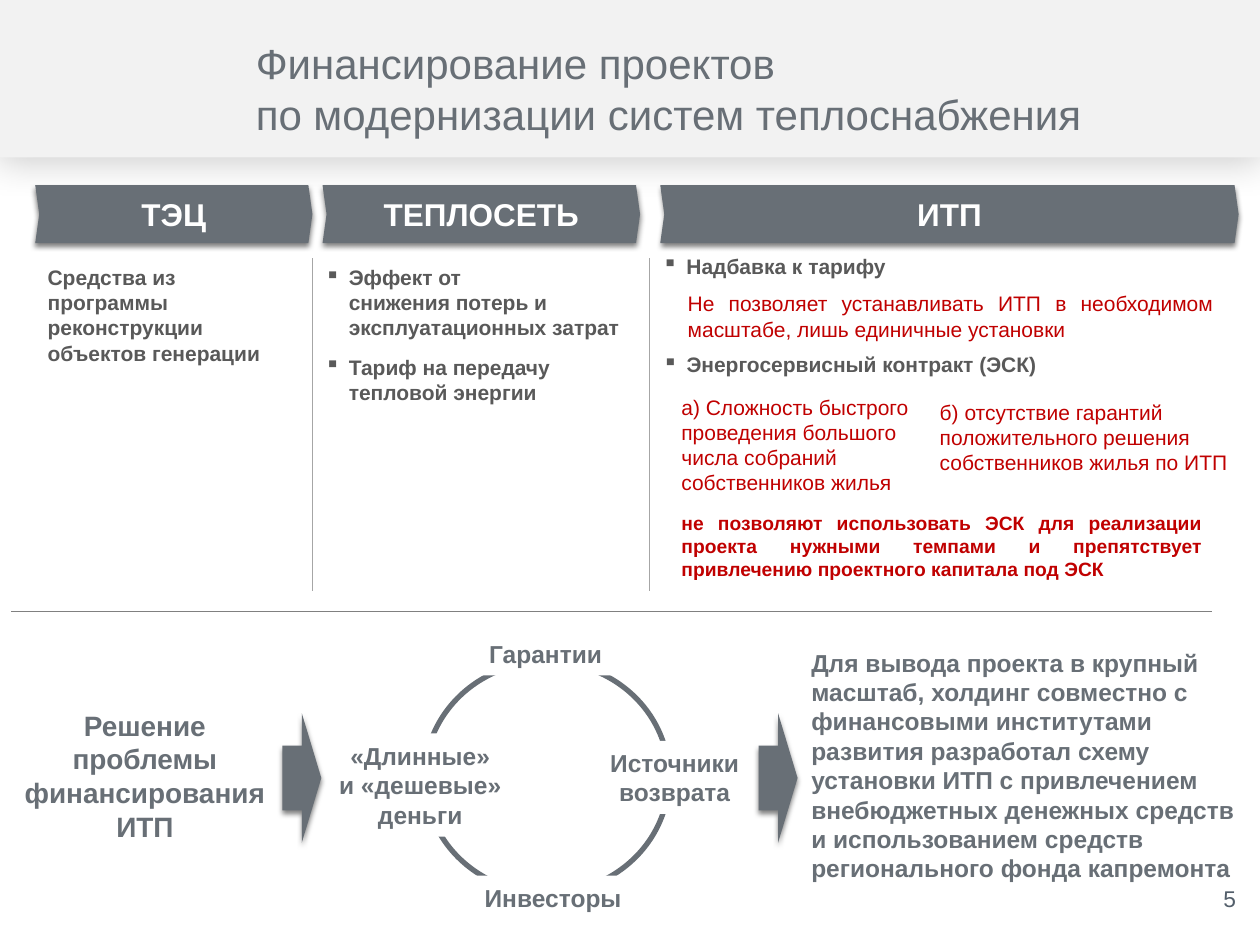
from dataclasses import dataclass

import pptx
import pptx.dml.color
import pptx.enum.shapes
import pptx.enum.text
import pptx.oxml
import pptx.oxml.ns
import pptx.util

PX = 9144
SHAPE = pptx.enum.shapes.MSO_SHAPE
ALIGN = pptx.enum.text.PP_ALIGN
ANCHOR = pptx.enum.text.MSO_ANCHOR
NS = pptx.oxml.ns.nsdecls("a")


@dataclass(frozen=True)
class Theme:
    font: str = "Arial"
    slate: str = "686F76"
    body: str = "595959"
    alert: str = "C00000"
    white: str = "FFFFFF"
    header: str = "F2F2F2"
    divider: str = "A6A6A6"
    rule: str = "808080"
    number: str = "525E6A"
    title_pt: int = 24
    banner_pt: int = 18
    problem_pt: int = 16
    scheme_pt: int = 14
    number_pt: int = 13
    body_pt: int = 12
    summary_pt: int = 11


T = Theme()


@dataclass(frozen=True)
class Box:
    x: int
    y: int
    w: int
    h: int

    def emu(self) -> tuple[int, ...]:
        return tuple(v * PX for v in (self.x, self.y, self.w, self.h))


@dataclass(frozen=True)
class Style:
    size: int
    color: str
    bold: bool = True
    align: ALIGN = ALIGN.LEFT
    anchor: ANCHOR = ANCHOR.TOP
    inset: tuple[int, int] = (10, 5)
    bullet: bool = False
    gap: int = 0


@dataclass(frozen=True)
class Note:
    box: Box
    text: str
    style: Style


@dataclass(frozen=True)
class Shadow:
    alpha: int
    blur: int
    dist: int


def rgb(color: str) -> pptx.dml.color.RGBColor:
    return pptx.dml.color.RGBColor.from_string(color)


def write(sp, text: str, style: Style) -> None:
    tf = sp.text_frame
    tf.text = text
    tf.word_wrap = True
    tf.auto_size = pptx.enum.text.MSO_AUTO_SIZE.NONE
    tf.vertical_anchor = style.anchor
    tf.margin_left = tf.margin_right = style.inset[0] * PX
    tf.margin_top = tf.margin_bottom = style.inset[1] * PX
    for i, p in enumerate(tf.paragraphs):
        p.alignment = style.align
        p.space_before = pptx.util.Pt(style.gap if i else 0)
        p.space_after = pptx.util.Pt(style.gap)
        if style.bullet:
            pPr = p._p.get_or_add_pPr()
            pPr.set("marL", str(19 * PX))
            pPr.set("indent", str(-19 * PX))
            pPr.append(pptx.oxml.parse_xml(f'<a:buChar {NS} char="▪"/>'))
        for r in p.runs:
            r.font.name = T.font
            r.font.size = pptx.util.Pt(style.size)
            r.font.bold = style.bold
            r.font.color.rgb = rgb(style.color)


def add_note(s, note: Note) -> None:
    write(s.shapes.add_textbox(*note.box.emu()), note.text, note.style)


def add_block(s, kind: SHAPE, box: Box, fill: str, shadow: Shadow | None = None):
    sp = s.shapes.add_shape(kind, *box.emu())
    sp.shadow.inherit = False
    sp.fill.solid()
    sp.fill.fore_color.rgb = rgb(fill)
    sp.line.fill.background()
    if shadow:
        effects = sp._element.spPr.find(pptx.oxml.ns.qn("a:effectLst"))
        effects.append(pptx.oxml.parse_xml(
            f'<a:outerShdw {NS} blurRad="{shadow.blur * 12700}" dist="{shadow.dist * 12700}" '
            f'dir="5400000" algn="t" rotWithShape="0"><a:srgbClr val="000000">'
            f'<a:alpha val="{shadow.alpha * 1000}"/></a:srgbClr></a:outerShdw>'))
    return sp


def add_rule(s, x1: int, y1: int, x2: int, y2: int, color: str) -> None:
    line = s.shapes.add_connector(pptx.enum.shapes.MSO_CONNECTOR.STRAIGHT,
                                  x1 * PX, y1 * PX, x2 * PX, y2 * PX)
    line.line.color.rgb = rgb(color)
    line.line.width = pptx.util.Pt(0.25)
    line._element.spPr.append(pptx.oxml.parse_xml(f"<a:effectLst {NS}/>"))


TIGHT = (6, 6)
TITLE = Style(T.title_pt, T.slate, bold=False, anchor=ANCHOR.BOTTOM)
BANNER = Style(T.banner_pt, T.white, align=ALIGN.CENTER, anchor=ANCHOR.MIDDLE, inset=TIGHT)
BODY = Style(T.body_pt, T.body, gap=4)
BULLETS = Style(T.body_pt, T.body, bullet=True, gap=4)
OBSTACLE = Style(T.body_pt, T.alert, bold=False, gap=4)
LIMIT = Style(T.body_pt, T.alert, bold=False, align=ALIGN.JUSTIFY, gap=4)
SUMMARY = Style(T.summary_pt, T.alert, align=ALIGN.JUSTIFY, gap=4)
PROBLEM = Style(T.problem_pt, T.slate, align=ALIGN.CENTER, anchor=ANCHOR.MIDDLE, inset=TIGHT)
FACTOR = Style(T.scheme_pt, T.slate, align=ALIGN.CENTER, anchor=ANCHOR.MIDDLE, inset=TIGHT)
OUTCOME = Style(T.scheme_pt, T.slate, gap=4)
NUMBER = Style(T.number_pt, T.number, bold=False, align=ALIGN.RIGHT, inset=(0, 0))

HEADER_SHADOW = Shadow(19, 21, 3)
BLOCK_SHADOW = Shadow(50, 3, 2)

BANNERS = [(28, 220, "ТЭЦ"), (256, 252, "ТЕПЛОСЕТЬ"), (524, 459, "ИТП")]
NOTES = [
    Note(Box(28, 205, 220, 91), "Средства из программы реконструкции объектов генерации", BODY),
    Note(Box(248, 205, 260, 122), "Эффект от\vснижения потерь и эксплуатационных затрат\n"
         "Тариф на передачу тепловой энергии", BULLETS),
    Note(Box(516, 196, 370, 62), "Надбавка к тарифу", BULLETS),
    Note(Box(536, 226, 437, 50), "Не позволяет устанавливать ИТП в необходимом масштабе, "
         "лишь единичные установки", LIMIT),
    Note(Box(516, 274, 408, 62), "Энергосервисный контракт (ЭСК)", BULLETS),
    Note(Box(531, 308, 236, 91), "а) Сложность быстрого проведения большого числа собраний "
         "собственников жилья", OBSTACLE),
    Note(Box(736, 312, 264, 71), "б) отсутствие гарантий положительного решения "
         "собственников жилья по ИТП", OBSTACLE),
    Note(Box(531, 401, 433, 66), "не позволяют использовать ЭСК для реализации проекта нужными "
         "темпами и препятствует привлечению проектного капитала под ЭСК", SUMMARY),
    Note(Box(-3, 556, 236, 119), "Решение\nпроблемы\nфинансирования\vИТП", PROBLEM),
    Note(Box(634, 509, 358, 199), "Для вывода проекта в крупный масштаб, холдинг совместно с "
         "финансовыми институтами развития разработал схему установки ИТП с привлечением "
         "внебюджетных денежных средств и использованием средств регионального фонда "
         "капремонта", OUTCOME),
    Note(Box(932, 702, 49, 22), "5", NUMBER),
]
FACTORS = [
    Note(Box(256, 582, 155, 82), "«Длинные»\nи «дешевые»\vденьги", FACTOR),
    Note(Box(374, 695, 130, 35), "Инвесторы", FACTOR),
    Note(Box(469, 588, 133, 58), "Источники\nвозврата", FACTOR),
    Note(Box(374, 501, 118, 35), "Гарантии", FACTOR),
]


def main() -> None:
    prs = pptx.Presentation()
    prs.slide_width, prs.slide_height = 1000 * PX, 750 * PX
    s = prs.slides.add_slide(prs.slide_layouts[5])

    title = s.shapes.title
    title.left, title.top, title.width, title.height = Box(193, 35, 735, 80).emu()
    write(title, "Финансирование проектов\vпо модернизации систем теплоснабжения", TITLE)
    header = add_block(s, SHAPE.RECTANGLE, Box(-1, -1, 1002, 126), T.header, HEADER_SHADOW)
    title.element.addprevious(header.element)

    for x, w, text in BANNERS:
        banner = add_block(s, SHAPE.CHEVRON, Box(x, 147, w, 46), T.slate, BLOCK_SHADOW)
        banner.adjustments[0] = 0.07
        write(banner, text, BANNER)
    for x in (248, 515):
        add_rule(s, x, 205, x, 469, T.divider)
    add_rule(s, 9, 485, 962, 485, T.rule)

    ring = add_block(s, SHAPE.OVAL, Box(337, 525, 194, 184), T.white)
    ring.fill.background()
    ring.line.color.rgb = rgb(T.slate)
    ring.line.width = pptx.util.Pt(3)
    for factor in FACTORS:
        write(add_block(s, SHAPE.RECTANGLE, factor.box, T.white), factor.text, factor.style)
    for x in (224, 602):
        add_block(s, SHAPE.RIGHT_ARROW, Box(x, 566, 31, 103), T.slate, BLOCK_SHADOW)
    for note in NOTES:
        add_note(s, note)

    prs.save("out.pptx")


if __name__ == "__main__":
    main()
